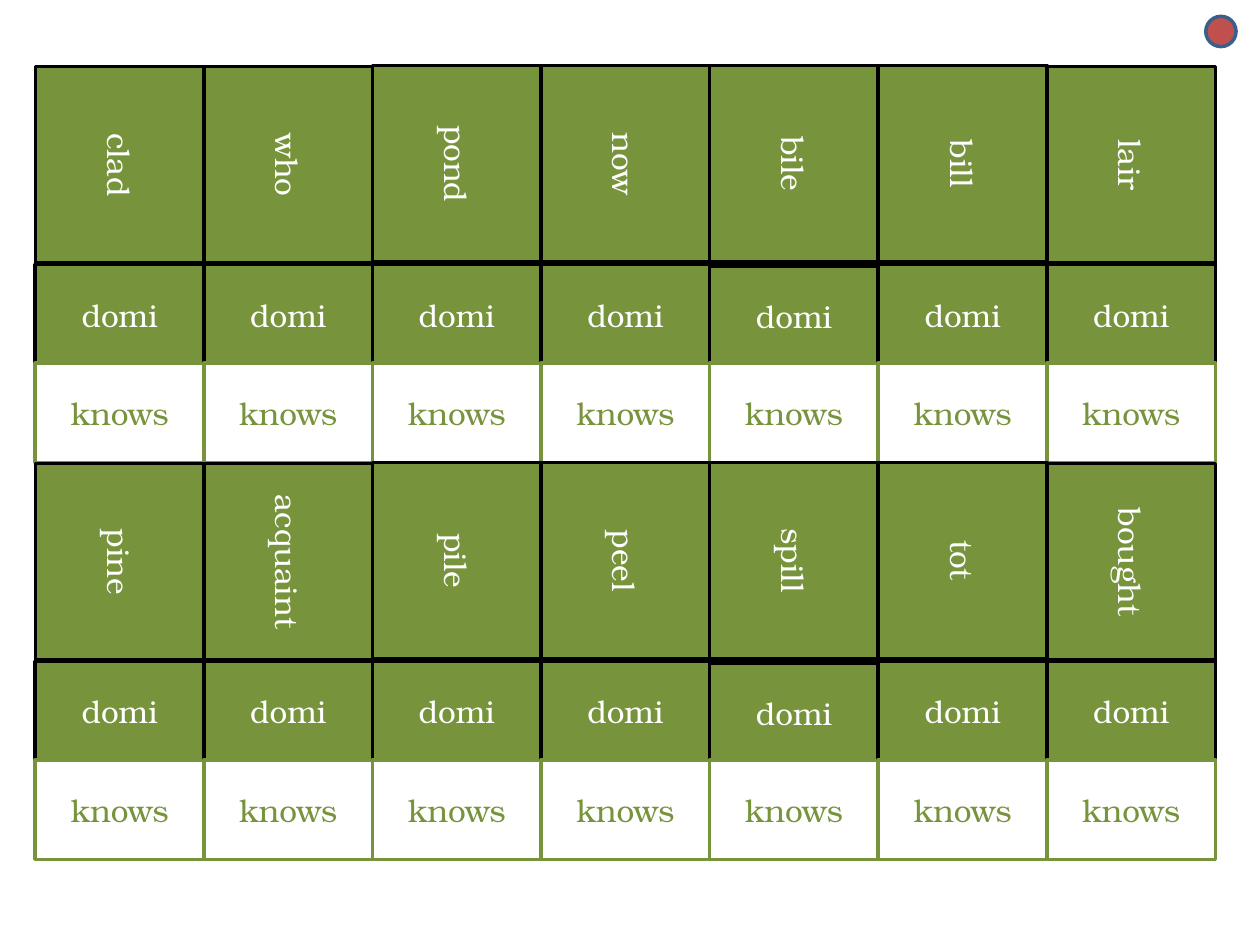
"""Build a sheet of domino word cards in two bands of seven columns."""
from dataclasses import dataclass

from pptx import Presentation
from pptx.dml.color import RGBColor as RGB
from pptx.enum.shapes import MSO_SHAPE as Shape
from pptx.enum.text import MSO_ANCHOR as Anchor, PP_ALIGN as Align
from pptx.util import Inches, Pt


@dataclass(frozen=True)
class Theme:
    green: RGB = RGB(0x77, 0x93, 0x3C)
    white: RGB = RGB(0xFF, 0xFF, 0xFF)
    black: RGB = RGB(0, 0, 0)
    red: RGB = RGB(0xC0, 0x50, 0x4D)
    blue: RGB = RGB(0x3A, 0x5F, 0x8C)
    font: str = "TeX Gyre Bonum"
    size: int = 18
    line: int = 2


@dataclass(frozen=True)
class Grid:
    left: float = 0.28
    top: float = 0.53
    col: float = 1.34
    band: float = 3.15
    word: float = 1.56
    half: float = 0.79


@dataclass(frozen=True)
class Tile:
    text: str
    x: float
    y: float
    h: float
    fill: RGB
    line: RGB
    ink: RGB
    turned: bool = False


T = Theme()
G = Grid()
BANDS = (
    ("clad", "who", "pond", "now", "bile", "bill", "lair"),
    ("pine", "acquaint", "pile", "peel", "spill", "tot", "bought"),
)
WORD_NUDGE = (0, 0, -0.01, -0.01, -0.01, -0.01, 0)
DOMI_NUDGE = (0, 0, 0, 0, 0.01, 0, 0)


def add_shape(s, kind: Shape, x: float, y: float, w: float, h: float, fill: RGB, line: RGB):
    sp = s.shapes.add_shape(kind, Inches(x), Inches(y), Inches(w), Inches(h))
    sp.shadow.inherit = False
    sp.fill.solid()
    sp.fill.fore_color.rgb = fill
    sp.line.color.rgb = line
    sp.line.width = Pt(T.line)
    return sp


def add_tile(s, tile: Tile) -> None:
    x, y, w, h = tile.x, tile.y, G.col, tile.h
    if tile.turned:
        x, y, w, h = x + (w - h) / 2, y + (h - w) / 2, h, w
    sp = add_shape(s, Shape.RECTANGLE, x, y, w, h, tile.fill, tile.line)
    sp.rotation = 90 if tile.turned else 0
    tf = sp.text_frame
    tf.word_wrap = True
    tf.vertical_anchor = Anchor.MIDDLE
    tf.text = tile.text
    p = tf.paragraphs[0]
    p.alignment = Align.CENTER
    font = p.runs[0].font
    font.name, font.size = T.font, Pt(T.size)
    font.color.rgb = tile.ink


def add_band(s, row: int, words: tuple[str, ...]) -> None:
    top = G.top + row * G.band
    domi = top + G.word + 0.01
    columns = [G.left + i * G.col - 0.002 * i for i in range(len(words))]
    for x, dy in zip(columns, DOMI_NUDGE):
        add_tile(s, Tile("domi", x, domi + dy, G.half, T.green, T.black, T.white))
        add_tile(s, Tile("knows", x, top + 2.35, G.half, T.white, T.green, T.green))
    for x, dy, word in zip(columns, WORD_NUDGE, words):
        add_tile(s, Tile(word, x, top + dy, G.word, T.green, T.black, T.white, True))


def main() -> None:
    prs = Presentation()
    prs.slide_width, prs.slide_height = Inches(10), Inches(7.5)
    s = prs.slides.add_slide(prs.slide_layouts[6])
    for row, words in enumerate(BANDS):
        add_band(s, row, words)
    add_shape(s, Shape.OVAL, 9.57, 0.13, 0.24, 0.24, T.red, T.blue)
    prs.save("out.pptx")


if __name__ == "__main__":
    main()
